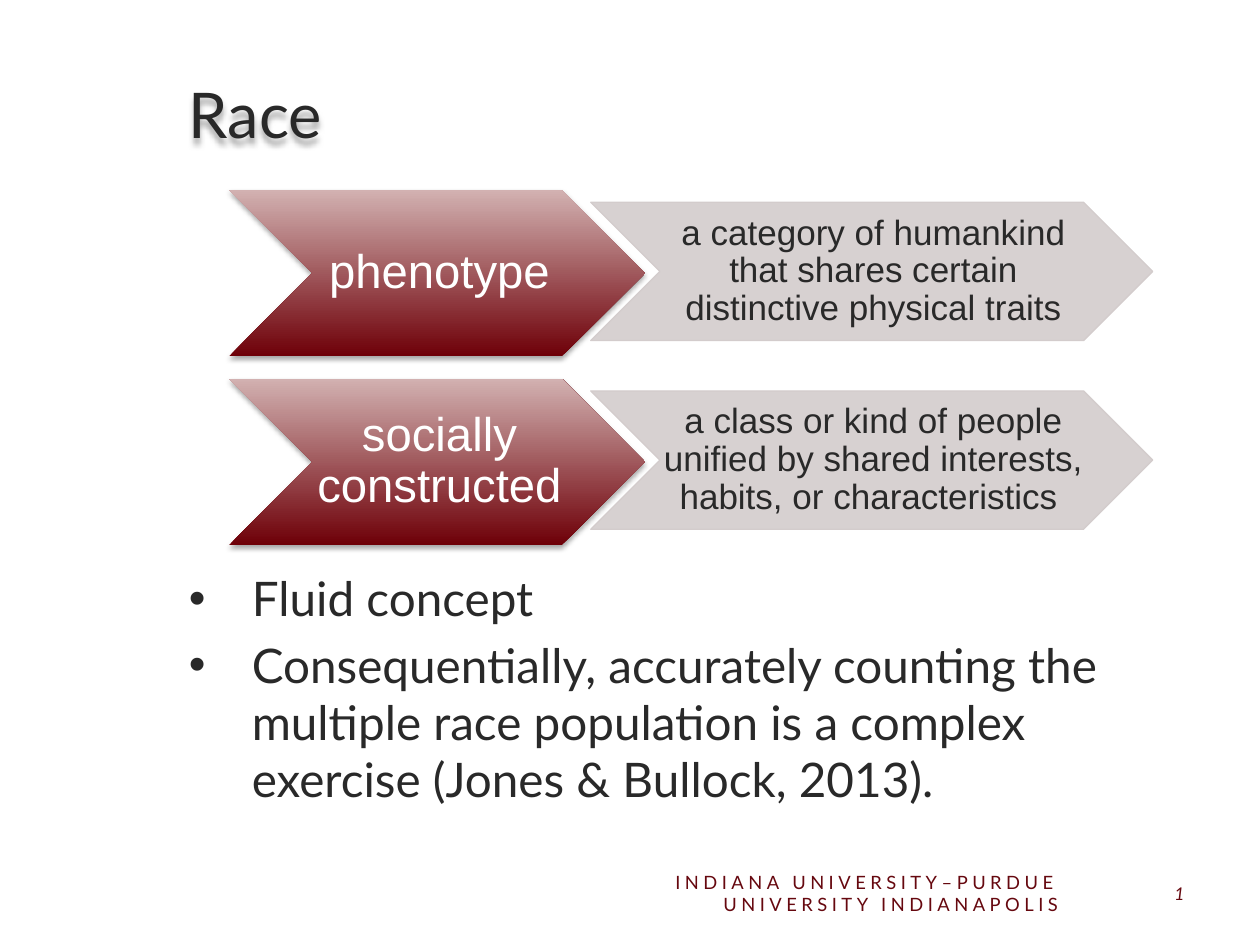
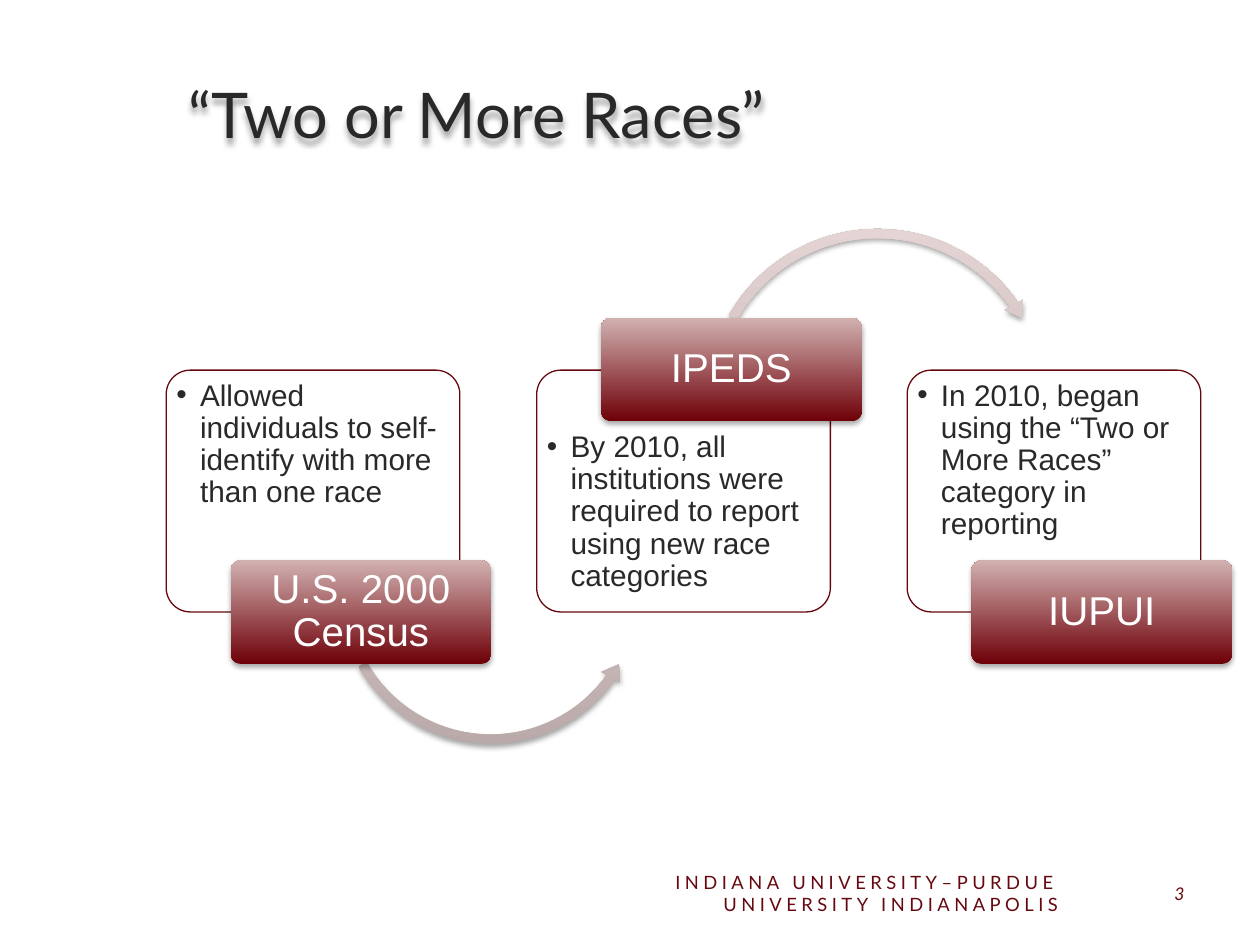
from lxml.etree import SubElement
from pptx import Presentation
from pptx.dml.color import RGBColor
from pptx.enum.shapes import MSO_SHAPE
from pptx.enum.text import MSO_ANCHOR, PP_ALIGN
from pptx.oxml.ns import qn
from pptx.util import Pt

INK = RGBColor(0x29, 0x29, 0x29)
WHITE = RGBColor(0xFF, 0xFF, 0xFF)
CRIMSON = RGBColor(0x66, 0x08, 0x0F)
GREY = RGBColor(0xD3, 0xCC, 0xCC)
RED_FADE = (RGBColor(0x6E, 0x00, 0x08), RGBColor(0xD2, 0xB1, 0xB1))
ROSE_FADE = (RGBColor(0xBA, 0xA9, 0xA9), RGBColor(0xE5, 0xD4, 0xD4))
HEADING_FONT, DIAGRAM_FONT = "Lato", "Arial"


def write(shape, *texts, size, font=HEADING_FONT, color=INK, italic=False,
          align=PP_ALIGN.LEFT, anchor=MSO_ANCHOR.MIDDLE, margins=(7.2, 3.6, 7.2, 3.6),
          leading=None, before=0, indent=None, tracking=None):
    """Fill a shape with paragraphs; an indent turns them into bullets."""
    frame = shape.text_frame
    frame.word_wrap = True
    frame.vertical_anchor = anchor
    (frame.margin_left, frame.margin_top,
     frame.margin_right, frame.margin_bottom) = map(Pt, margins)
    for index, text in enumerate(texts):
        paragraph = frame.add_paragraph() if index else frame.paragraphs[0]
        paragraph.alignment = align
        if leading:
            paragraph.line_spacing = leading
        if index and before:
            paragraph.space_before = Pt(before)
        if indent:
            properties = paragraph._p.get_or_add_pPr()
            properties.set("marL", str(Pt(indent)))
            properties.set("indent", str(-Pt(indent)))
            SubElement(properties, qn("a:buFont"), typeface="Arial")
            SubElement(properties, qn("a:buChar"), char="•")
        run = paragraph.add_run()
        run.text = text
        run.font.size = Pt(size)
        run.font.name = font
        run.font.color.rgb = color
        run.font.italic = italic
        if tracking:
            run._r.get_or_add_rPr().set("spc", str(round(tracking * 100)))


def paint(shape, fade=None, solid=None, line=None, opacity=100, shadow=None):
    """Set fill, outline and a downward shadow whose distance is in points."""
    shape.shadow.inherit = False
    if fade:
        shape.fill.gradient()
        shape.fill.gradient_angle = 90
        for stop, color in zip(shape.fill.gradient_stops, fade):
            stop.color.rgb = color
    if solid is not None:
        shape.fill.solid()
        shape.fill.fore_color.rgb = solid
        for color in shape._element.spPr.iter(qn("a:srgbClr")):
            SubElement(color, qn("a:alpha"), val=str(opacity * 1000))
    if line is None:
        shape.line.fill.background()
    else:
        shape.line.color.rgb = line
        shape.line.width = Pt(0.75)
    if shadow:
        effects = shape._element.spPr.find(qn("a:effectLst"))
        outer = SubElement(effects, qn("a:outerShdw"), blurRad=str(Pt(3.1)),
                           dist=str(Pt(shadow)), dir="5400000", rotWithShape="0")
        black = SubElement(outer, qn("a:srgbClr"), val="000000")
        SubElement(black, qn("a:alpha"), val="35000")


deck = Presentation()
deck.slide_width, deck.slide_height = Pt(720), Pt(540)

# Title, footer and page number on every slide
slides = []
for heading, number in (("Race", "1"), ("“Two or More Races”", "3")):
    slide = deck.slides.add_slide(deck.slide_layouts[6])
    slides.append(slide)
    title = slide.shapes.add_textbox(Pt(100.8), Pt(21.6), Pt(583.2), Pt(85.7))
    paint(title, shadow=3)
    write(title, heading, size=36)
    footer = slide.shapes.add_textbox(Pt(290.9), Pt(496), Pt(321.1), Pt(28.8))
    write(footer, "INDIANA UNIVERSITY–PURDUE UNIVERSITY INDIANAPOLIS", size=10.5,
          color=CRIMSON, align=PP_ALIGN.RIGHT, tracking=2.6)
    page = slide.shapes.add_textbox(Pt(619.2), Pt(496), Pt(64.8), Pt(28.8))
    write(page, number, size=10, color=CRIMSON, italic=True, align=PP_ALIGN.RIGHT)
race, two_or_more = (slide.shapes for slide in slides)

# Race: each aspect chevron points to its definition
definitions = (
    ("phenotype", "a category of humankind that shares certain distinctive physical traits"),
    ("socially constructed",
     "a class or kind of people unified by shared interests, habits, or characteristics "),
)
for row, (term, meaning) in enumerate(definitions):
    top = 108.6 + row * 107.8
    aspect = race.add_shape(MSO_SHAPE.CHEVRON, Pt(131), Pt(top), Pt(237.6), Pt(95))
    paint(aspect, fade=RED_FADE, shadow=1.8)
    write(aspect, term, size=27, font=DIAGRAM_FONT, color=WHITE, align=PP_ALIGN.CENTER,
          margins=(2.7, 1.35, 0, 1.35), leading=0.9)
    definition = race.add_shape(MSO_SHAPE.CHEVRON, Pt(337.6), Pt(top + 7),
                                Pt(321.1), Pt(79))
    paint(definition, solid=GREY, line=GREY, opacity=90)
    write(definition, meaning, size=20, font=DIAGRAM_FONT, align=PP_ALIGN.CENTER,
          margins=(2, 1, 0, 1), leading=0.9)

# Race: conclusions
conclusions = race.add_textbox(Pt(100.8), Pt(321.8), Pt(583.2), Pt(149))
write(conclusions, "Fluid concept",
      "Consequentially, accurately counting the multiple race population is a complex "
      "exercise (Jones & Bullock, 2013).",
      size=27.2, anchor=MSO_ANCHOR.TOP, before=5.4, indent=36)

# Two or More Races: steps, with labels alternating below and above the cards
BELOW, ABOVE = 320.2, 181.6
steps = (
    ("U.S. 2000 Census", "Allowed individuals to self-identify with more than one race", BELOW,
     (MSO_SHAPE.LEFT_CIRCULAR_ARROW, 190.1, 247.7, 180.7,
      (0.029, 3.567, 21.322, 90.245, 0.034))),
    ("IPEDS", "By 2010, all institutions were required to report using new race categories",
     ABOVE,
     (MSO_SHAPE.CIRCULAR_ARROW, 400.3, 127.4, 202.3,
      (0.026, 3.166, 195.079, 125.755, 0.03))),
    ("IUPUI", "In 2010, began using the “Two or More Races” category in reporting", BELOW, None),
)
for column, (source, change, label_top, link) in enumerate(steps):
    left = 95 + column * 211.7
    card = two_or_more.add_shape(MSO_SHAPE.ROUNDED_RECTANGLE, Pt(left), Pt(211.5),
                                 Pt(167.8), Pt(138.2))
    card.adjustments[0] = 0.1
    paint(card, solid=WHITE, line=CRIMSON, opacity=90)
    write(card, change, size=17, font=DIAGRAM_FONT, anchor=MSO_ANCHOR.TOP, leading=0.9,
          margins=(1.8, 31.3 if label_top == ABOVE else 1.8, 2.4, 1.8), indent=13.5)

    if link:
        kind, link_left, link_top, side, bends = link
        arrow = two_or_more.add_shape(kind, Pt(link_left), Pt(link_top), Pt(side), Pt(side))
        for index, bend in enumerate(bends):
            arrow.adjustments[index] = bend
        paint(arrow, fade=ROSE_FADE, shadow=1.8)

    label = two_or_more.add_shape(MSO_SHAPE.ROUNDED_RECTANGLE, Pt(left + 36.8),
                                  Pt(label_top), Pt(149), Pt(59.2))
    label.adjustments[0] = 0.1
    paint(label, fade=RED_FADE, shadow=1.8)
    write(label, source, size=23, font=DIAGRAM_FONT, color=WHITE, align=PP_ALIGN.CENTER,
          margins=(3.6, 2.2, 3.6, 2.2), leading=0.9)

deck.save("out.pptx")
